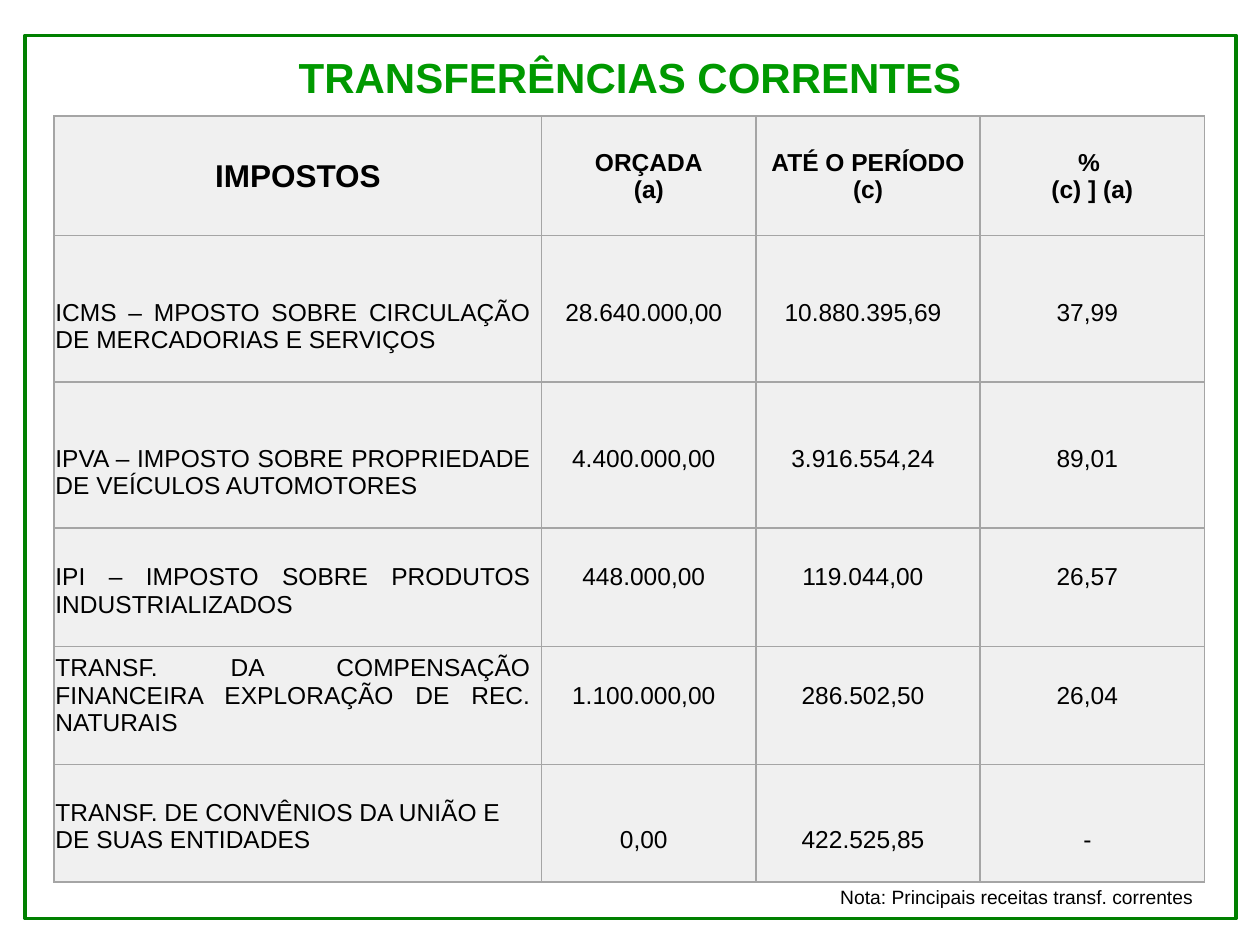
import pptx
import pptx.util
import pptx.dml.color
import pptx.enum.shapes
import pptx.enum.text
from lxml import etree
from pptx.util import Inches, Pt

ALIGN = pptx.enum.text.PP_ALIGN
ANCHOR = pptx.enum.text.MSO_ANCHOR

COLORS = {"title": "009900", "frame": "008000", "text": "000000",
          "cell": "F0F0F0", "border": "A5A5A5"}
FONT = "Arial"
TITLE = "TRANSFERÊNCIAS CORRENTES"
NOTE = "Nota: Principais receitas transf. correntes"
HEADER = ["IMPOSTOS", "ORÇADA\n(a)", "ATÉ O PERÍODO (c)", "% \n(c) ] (a)"]
ROWS = [
    ["ICMS – MPOSTO SOBRE CIRCULAÇÃO DE MERCADORIAS E SERVIÇOS",
     "28.640.000,00", "10.880.395,69", "37,99"],
    ["IPVA – IMPOSTO SOBRE PROPRIEDADE DE VEÍCULOS AUTOMOTORES",
     "4.400.000,00", "3.916.554,24", "89,01"],
    ["IPI – IMPOSTO SOBRE PRODUTOS INDUSTRIALIZADOS",
     "448.000,00", "119.044,00", "26,57"],
    ["TRANSF. DA COMPENSAÇÃO FINANCEIRA EXPLORAÇÃO DE REC. NATURAIS",
     "1.100.000,00", "286.502,50", "26,04"],
    ["TRANSF. DE CONVÊNIOS DA UNIÃO E DE SUAS ENTIDADES",
     "0,00", "422.525,85", "-"],
]
COLUMN_WIDTHS = [3.87, 1.7, 1.78, 1.78]
ROW_HEIGHTS = [0.95, 1.16, 1.16, 0.94, 0.94, 0.93]
LINE_HEIGHT = 0.22


def rgb(name):
    return pptx.dml.color.RGBColor.from_string(COLORS[name])


def format_text(text_frame, size, color="text", bold=False, align=ALIGN.LEFT):
    for paragraph in text_frame.paragraphs:
        paragraph.alignment = align
        for run in paragraph.runs:
            run.font.name = FONT
            run.font.size = Pt(size)
            run.font.bold = bold
            run.font.color.rgb = rgb(color)


def add_text(slide, box, text, size, **style):
    shape = slide.shapes.add_textbox(*map(Inches, box))
    shape.text_frame.word_wrap = True
    shape.text_frame.text = text
    format_text(shape.text_frame, size, **style)


def set_borders(cell):
    properties = cell._tc.get_or_add_tcPr()
    namespace = "{http://schemas.openxmlformats.org/drawingml/2006/main}"
    for index, side in enumerate(("lnL", "lnR", "lnT", "lnB")):
        line = etree.Element(namespace + side, w=str(Pt(1)))
        fill = etree.SubElement(line, namespace + "solidFill")
        etree.SubElement(fill, namespace + "srgbClr", val=COLORS["border"])
        properties.insert(index, line)


def fill_cell(cell, text, row, column):
    is_header, is_label = row == 0, column == 0
    cell.text_frame.text = text
    cell.fill.solid()
    cell.fill.fore_color.rgb = rgb("cell")
    cell.margin_left = cell.margin_top = Inches(0.01)
    cell.margin_right = Inches(0.01 if is_header else 0.09)
    last_row = row == len(ROWS)
    if is_header:
        cell.vertical_anchor = ANCHOR.MIDDLE
        cell.margin_bottom = 0
    else:
        # Values sit level with the line above the label's last one, except in the last row
        lines_below = 1 if is_label or last_row else 2
        cell.vertical_anchor = ANCHOR.BOTTOM
        cell.margin_bottom = Inches(lines_below * LINE_HEIGHT)
    if is_header or not is_label:
        align = ALIGN.CENTER
    else:
        align = ALIGN.LEFT if last_row else ALIGN.JUSTIFY
    size = 18 if is_header and is_label else 14
    format_text(cell.text_frame, size, bold=is_header, align=align)
    set_borders(cell)


def add_tax_table(slide):
    frame = slide.shapes.add_table(
        len(ROW_HEIGHTS), len(COLUMN_WIDTHS), Inches(0.43), Inches(0.92),
        Inches(sum(COLUMN_WIDTHS)), Inches(sum(ROW_HEIGHTS)))
    table = frame.table
    for column, width in zip(table.columns, COLUMN_WIDTHS):
        column.width = Inches(width)
    for row, height in zip(table.rows, ROW_HEIGHTS):
        row.height = Inches(height)
    for row, texts in enumerate([HEADER] + ROWS):
        for column, text in enumerate(texts):
            fill_cell(table.cell(row, column), text, row, column)


def main():
    presentation = pptx.Presentation()
    presentation.slide_width, presentation.slide_height = Inches(10), Inches(7.5)
    slide = presentation.slides.add_slide(presentation.slide_layouts[6])

    add_text(slide, (2.24, 0.36, 5.52, 0.5), TITLE, 24,
             color="title", bold=True, align=ALIGN.CENTER)
    frame = slide.shapes.add_shape(
        pptx.enum.shapes.MSO_SHAPE.RECTANGLE,
        Inches(0.2), Inches(0.28), Inches(9.61), Inches(7.01))
    frame.shadow.inherit = False
    frame.fill.background()
    frame.line.color.rgb = rgb("frame")
    frame.line.width = Pt(2)
    add_tax_table(slide)
    add_text(slide, (6.57, 6.98, 3.15, 0.29), NOTE, 11)

    presentation.save("out.pptx")


if __name__ == "__main__":
    main()
